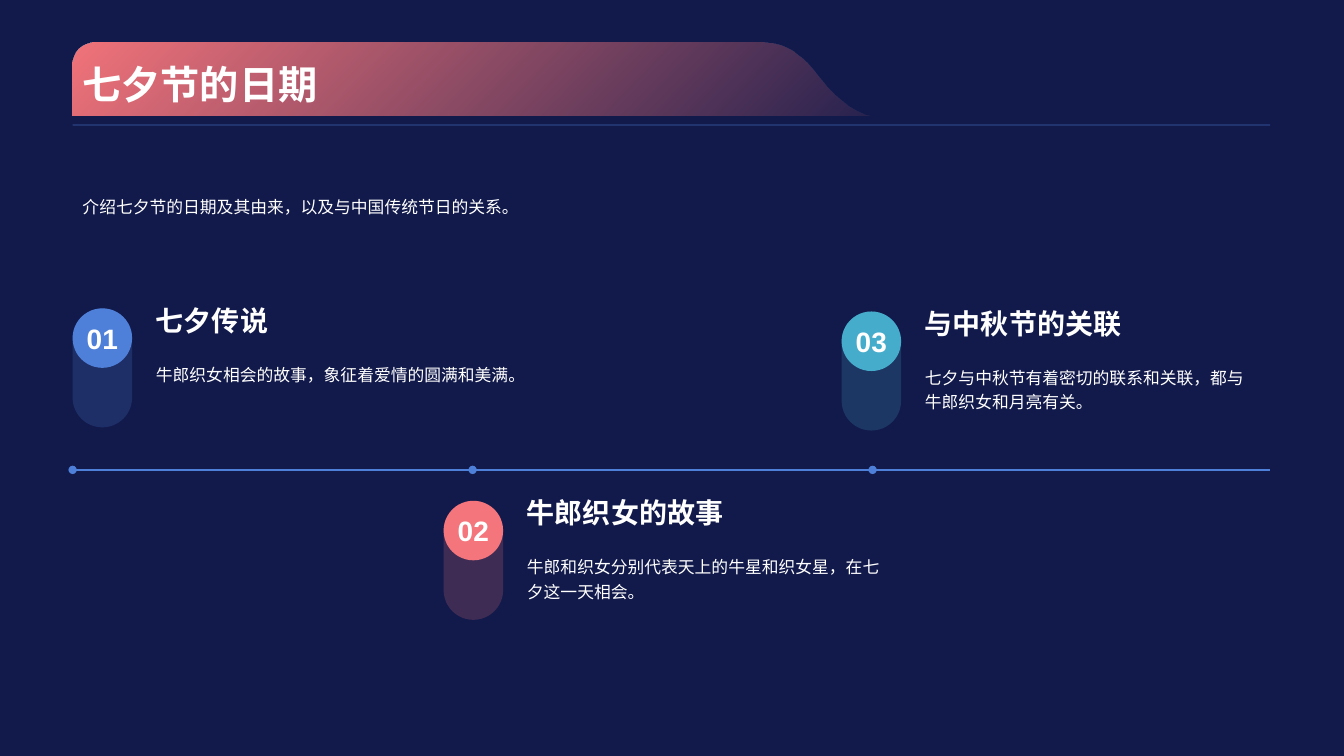
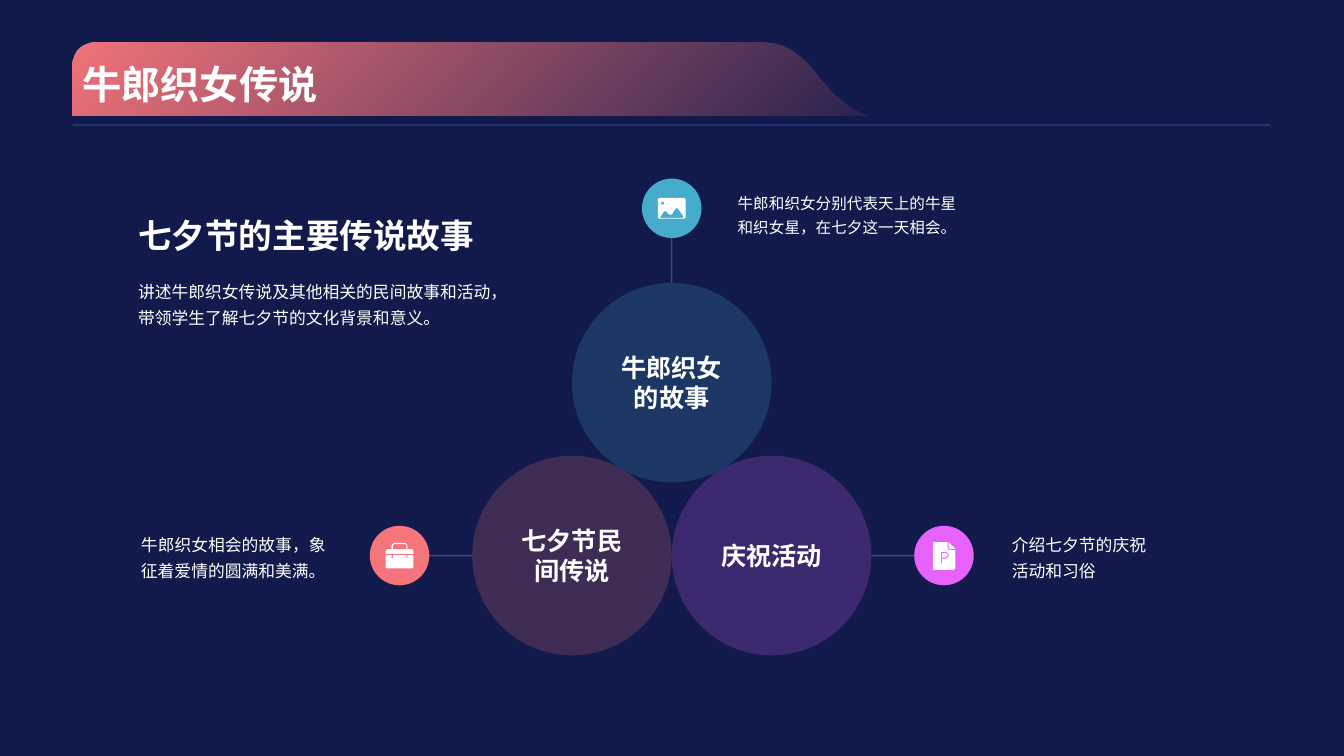
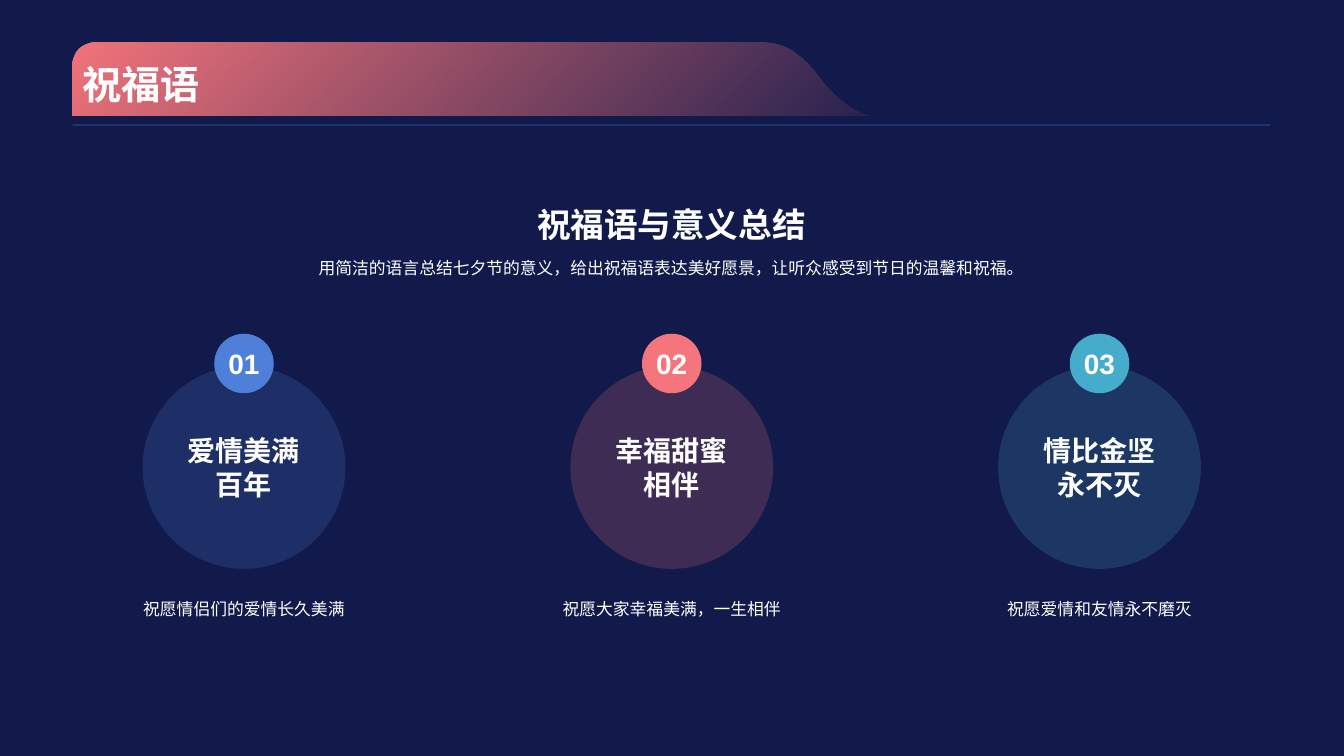
import math
from dataclasses import dataclass

from lxml import etree
from pptx import Presentation, util as u
from pptx.dml.color import RGBColor
from pptx.enum import lang, shapes, text
from pptx.oxml import ns

Point = tuple[float, float]
Contour = list[Point]
LEFT, CENTER, RIGHT = text.PP_ALIGN.LEFT, text.PP_ALIGN.CENTER, text.PP_ALIGN.RIGHT
TOP, MIDDLE, BOTTOM = text.MSO_ANCHOR.TOP, text.MSO_ANCHOR.MIDDLE, text.MSO_ANCHOR.BOTTOM
OVAL = shapes.MSO_SHAPE.OVAL
PILL = shapes.MSO_SHAPE.ROUNDED_RECTANGLE


@dataclass(frozen=True)
class Theme:
    font: str = "Arial"
    night: str = "121A4B"
    white: str = "FFFFFF"
    blue: str = "4E80D9"
    coral: str = "F4757B"
    teal: str = "45ACCC"
    violet: str = "E762FB"
    tint: int = 20
    title: float = 28
    headline: float = 24
    heading: float = 20
    hub: float = 18
    body: float = 12
    caption: float = 11.1


@dataclass(frozen=True)
class Box:
    """A rectangle in centimetres."""
    left: float
    top: float
    width: float
    height: float

    def lengths(self) -> list[u.Length]:
        return [u.Cm(v) for v in (self.left, self.top, self.width, self.height)]


@dataclass(frozen=True)
class Style:
    size: float
    bold: bool = False
    align: text.PP_ALIGN = LEFT
    anchor: text.MSO_ANCHOR = TOP
    spacing: float = 1.0
    inset: Point = (0.25, 0.13)
    wrap: bool = True


@dataclass(frozen=True)
class Milestone:
    number: str
    heading: str
    body: str
    color: str
    left: float
    top: float
    width: float


@dataclass(frozen=True)
class Hub:
    label: str
    color: str
    center: Point
    badge: Point
    icon: list[Contour]
    caption: str
    caption_box: Box
    caption_style: Style


@dataclass(frozen=True)
class Wish:
    number: str
    label: str
    body: str
    color: str


THEME = Theme()
SLIDE = Box(0, 0, 33.87, 19.05)
CENTER_X = 16.93
MARGIN, CONTENT = 1.83, 30.18
BADGE = 1.5
BODY = Style(THEME.body, spacing=1.2)
CENTERED_BODY = Style(THEME.body, align=CENTER, spacing=1.2)
NUMBER = Style(THEME.heading, True, CENTER, MIDDLE, wrap=False)

# Icon outlines in centimetres, measured from the middle of the badge.
PICTURE_ICON = [
    [(-0.35, -0.23), (-0.32, -0.26), (0.32, -0.26), (0.35, -0.23),
     (0.35, 0.23), (0.32, 0.26), (-0.32, 0.26), (-0.35, 0.23)],
    [(-0.3, 0.24), (-0.2, 0.08), (-0.14, 0.08), (-0.06, 0.16), (0, 0.16),
     (0.1, 0), (0.15, 0), (0.3, 0.21), (0.27, 0.24)],
    [(-0.23 + 0.04 * math.cos(k * math.pi / 4), -0.13 + 0.04 * math.sin(k * math.pi / 4))
     for k in range(8)],
]
CASE_ICON = [
    [(-0.35, -0.01), (-0.2, -0.01), (-0.2, 0.06), (-0.17, 0.06), (-0.17, -0.01),
     (0.17, -0.01), (0.17, 0.06), (0.2, 0.06), (0.2, -0.01), (0.35, -0.01),
     (0.35, 0.3), (0.32, 0.32), (-0.32, 0.32), (-0.35, 0.3)],
    [(-0.35, -0.04), (-0.35, -0.12), (-0.32, -0.16), (-0.2, -0.16), (-0.2, -0.26),
     (-0.15, -0.32), (0.15, -0.32), (0.2, -0.26), (0.2, -0.16), (0.32, -0.16),
     (0.35, -0.12), (0.35, -0.04)],
    [(-0.17, -0.16), (-0.17, -0.26), (-0.14, -0.29), (0.14, -0.29), (0.17, -0.26),
     (0.17, -0.16)],
]
FILE_ICON = [
    [(-0.25, -0.34), (0.09, -0.34), (0.09, -0.19), (0.13, -0.14), (0.29, -0.14),
     (0.29, 0.32), (0.25, 0.36), (-0.25, 0.36), (-0.28, 0.33), (-0.28, -0.31)],
    [(0.12, -0.33), (0.29, -0.17), (0.15, -0.17), (0.12, -0.2)],
    [(-0.08, -0.09), (0.06, -0.09), (0.12, -0.03), (0.12, 0.02), (0.06, 0.08),
     (-0.05, 0.08), (-0.05, 0.2), (-0.08, 0.2)],
    [(-0.05, -0.06), (0.05, -0.06), (0.09, -0.02), (0.09, 0.01), (0.05, 0.05),
     (-0.05, 0.05)],
]


def set_alpha(color_node, percent: int) -> None:
    etree.SubElement(color_node, ns.qn("a:alpha")).set("val", str(percent * 1000))


def write(frame, words: str, style: Style) -> None:
    frame.auto_size = text.MSO_AUTO_SIZE.NONE
    frame.word_wrap = style.wrap
    frame.vertical_anchor = style.anchor
    frame.margin_left = frame.margin_right = u.Cm(style.inset[0])
    frame.margin_top = frame.margin_bottom = u.Cm(style.inset[1])
    para = frame.paragraphs[0]
    para.alignment = style.align
    para.line_spacing = style.spacing
    span = para.add_run()
    span.text = words
    font = span.font
    font.name, font.size, font.bold = THEME.font, u.Pt(style.size), style.bold
    font.color.rgb = RGBColor.from_string(THEME.white)
    font.language_id = lang.MSO_LANGUAGE_ID.SIMPLIFIED_CHINESE


def add_text(page, box: Box, words: str, style: Style) -> None:
    write(page.shapes.add_textbox(*box.lengths()).text_frame, words, style)


def paint(shape, color: str, alpha: int = 100) -> None:
    """Fill a shape flatly, without outline or shadow."""
    shape.shadow.inherit = False
    shape.line.fill.background()
    shape.fill.solid()
    shape.fill.fore_color.rgb = RGBColor.from_string(color)
    if alpha < 100:
        set_alpha(shape.element.xpath("./p:spPr/a:solidFill/a:srgbClr")[0], alpha)


def add_shape(page, kind: shapes.MSO_SHAPE, box: Box, color: str, alpha: int = 100):
    shape = page.shapes.add_shape(kind, *box.lengths())
    if kind == PILL:
        shape.adjustments[0] = 0.5
    paint(shape, color, alpha)
    return shape


def add_circle(page, center: Point, size: float, color: str, alpha: int = 100):
    box = Box(center[0] - size / 2, center[1] - size / 2, size, size)
    return add_shape(page, OVAL, box, color, alpha)


def add_number(page, left: float, top: float, number: str, color: str) -> None:
    badge = add_shape(page, PILL, Box(left, top, BADGE, BADGE), color)
    write(badge.text_frame, number, NUMBER)


def add_line(page, start: Point, end: Point, color: str, alpha: int = 100,
             dotted_start: bool = False):
    """Draw a 1 pt line, with a round dot at its start if asked."""
    line = page.shapes.add_connector(
        shapes.MSO_CONNECTOR.STRAIGHT, *[u.Cm(v) for v in (*start, *end)])
    line.line.width = u.Pt(1)
    line.line.color.rgb = RGBColor.from_string(color)
    stroke = line.element.xpath("./p:spPr/a:ln")[0]
    if alpha < 100:
        set_alpha(stroke.xpath("./a:solidFill/a:srgbClr")[0], alpha)
    if dotted_start:
        etree.SubElement(stroke, ns.qn("a:headEnd")).set("type", "oval")
    etree.SubElement(line.element.spPr, ns.qn("a:effectLst"))
    return line


def add_outline(page, contours: list[Contour], origin: Point = (0, 0)):
    """Build one freeform; contours inside others become holes."""
    placed = [[(u.Cm(origin[0] + x), u.Cm(origin[1] + y)) for x, y in contour]
              for contour in contours]
    builder = page.shapes.build_freeform(*placed[0][0])
    for index, contour in enumerate(placed):
        if index:
            builder.move_to(*contour[0])
        builder.add_line_segments(contour[1:], close=True)
    return builder.convert_to_shape()


def curve(a: Point, b: Point, c: Point, d: Point, steps: int = 16) -> Contour:
    """Points along a cubic Bezier curve."""
    points = []
    for step in range(steps + 1):
        t = step / steps
        weights = ((1 - t) ** 3, 3 * t * (1 - t) ** 2, 3 * t * t * (1 - t), t ** 3)
        points.append(tuple(sum(w * p[axis] for w, p in zip(weights, (a, b, c, d)))
                            for axis in (0, 1)))
    return points


def dress_layout(layout, page) -> None:
    """Draw the title band and rule on a page, then move them to its layout."""
    top, bottom = 1.07, 2.9
    tail = (20.45, 1.7)
    contour = [
        *curve(tail, (19.96, 1.17), (19.58, top), (19.2, top)),
        *curve((2.39, top), (2.08, top), (MARGIN, 1.32), (MARGIN, 1.65)),
        (MARGIN, bottom),
        *curve((21.92, bottom), (21.29, 2.72), (20.9, 2.26), tail),
    ]
    band = add_outline(page, [contour])
    paint(band, THEME.coral)
    band.fill.gradient()
    band.fill.gradient_angle = 315
    for stop, position in zip(band.fill.gradient_stops, (0, 1)):
        stop.position = position
        stop.color.rgb = RGBColor.from_string(THEME.coral)
    set_alpha(band.element.xpath(".//a:gs/a:srgbClr")[-1], 10)
    rule = add_line(page, (MARGIN, 3.15), (MARGIN + CONTENT, 3.15), THEME.blue, 40)
    for shape in (band, rule):
        layout.shapes.element.append(shape.element)


def add_page(deck, layout, title: str):
    page = deck.slides.add_slide(layout)
    holder = page.shapes.title
    box = Box(MARGIN, 0, CONTENT, 2.84)
    holder.left, holder.top, holder.width, holder.height = box.lengths()
    write(holder.text_frame, title, Style(THEME.title, True, anchor=BOTTOM))
    return page


def draw_dates(page) -> None:
    add_text(page, Box(MARGIN, 4.72, CONTENT, 0.81),
             "介绍七夕节的日期及其由来，以及与中国传统节日的关系。", BODY)
    step, length, axis = 10.08, 10.01, 11.84
    for index in range(3):
        left = MARGIN + index * step
        add_line(page, (left, axis), (left + length, axis), THEME.blue, dotted_start=True)
    inset = (0.3, 0.3)
    heading = Style(THEME.heading, True, anchor=BOTTOM, inset=inset)
    body = Style(THEME.body, spacing=1.2, inset=inset)
    milestones = [
        Milestone("01", "七夕传说", "牛郎织女相会的故事，象征着爱情的圆满和美满。",
                  THEME.blue, MARGIN, 7.77, 10.92),
        Milestone("02", "牛郎织女的故事", "牛郎和织女分别代表天上的牛星和织女星，在七夕这一天相会。",
                  THEME.coral, 11.18, 12.62, 9.65),
        Milestone("03", "与中秋节的关联", "七夕与中秋节有着密切的联系和关联，都与牛郎织女和月亮有关。",
                  THEME.teal, 21.21, 7.85, 8.97),
    ]
    for item in milestones:
        add_shape(page, PILL, Box(item.left, item.top, BADGE, 2 * BADGE),
                  item.color, THEME.tint)
        add_number(page, item.left, item.top, item.number, item.color)
        left = item.left + 1.8
        add_text(page, Box(left, item.top - 0.28, item.width, 1.3), item.heading, heading)
        add_text(page, Box(left, item.top + 1.02, item.width, 1.78), item.body, body)


def draw_legends(page) -> None:
    left, width = 3.23, 9.7
    add_text(page, Box(left, 4.9, width, 1.65), "七夕节的主要传说故事",
             Style(THEME.headline, True, anchor=BOTTOM))
    add_text(page, Box(left, 6.81, width, 1.52),
             "讲述牛郎织女传说及其他相关的民间故事和活动，带领学生了解七夕节的文化背景和意义。",
             Style(THEME.body, spacing=1.3))
    size, row, reach = 5.03, 14, 6.86
    radius = size / 2
    hubs = [
        Hub("牛郎织女的故事", THEME.teal, (CENTER_X, row - radius * math.sqrt(3)),
            (CENTER_X, 5.25), PICTURE_ICON,
            "牛郎和织女分别代表天上的牛星和织女星，在七夕这一天相会。",
            Box(18.34, 4.39, 6.22, 1.7), Style(THEME.caption, anchor=BOTTOM, spacing=1.3)),
        Hub("庆祝活动", THEME.violet, (CENTER_X + radius, row),
            (CENTER_X + reach, row), FILE_ICON, "介绍七夕节的庆祝活动和习俗",
            Box(25.25, 13.26, 4.29, 1.52), Style(THEME.body, anchor=BOTTOM, spacing=1.3)),
        Hub("七夕节民间传说", THEME.coral, (CENTER_X - radius, row),
            (CENTER_X - reach, row), CASE_ICON, "牛郎织女相会的故事，象征着爱情的圆满和美满。",
            Box(left, 13.26, 5.23, 1.52),
            Style(THEME.body, align=RIGHT, anchor=BOTTOM, spacing=1.3)),
    ]
    label = Style(THEME.hub, True, CENTER, MIDDLE)
    for hub in hubs:
        circle = add_circle(page, hub.center, size, hub.color, THEME.tint)
        write(circle.text_frame, hub.label, label)
        (x, y), (badge_x, badge_y) = hub.center, hub.badge
        share = radius / math.dist(hub.center, hub.badge)
        edge = (x + (badge_x - x) * share, y + (badge_y - y) * share)
        add_line(page, hub.badge, edge, THEME.white, THEME.tint)
        add_circle(page, hub.badge, BADGE, hub.color)
        paint(add_outline(page, hub.icon, hub.badge), THEME.white)
        add_text(page, hub.caption_box, hub.caption, hub.caption_style)


def draw_wishes(page) -> None:
    headline = Style(THEME.headline, True, CENTER, MIDDLE)
    add_text(page, Box(MARGIN, 4.7, CONTENT, 1.9), "祝福语与意义总结", headline)
    add_text(page, Box(MARGIN, 6.27, CONTENT, 0.81),
             "用简洁的语言总结七夕节的意义，给出祝福语表达美好愿景，让听众感受到节日的温馨和祝福。",
             CENTERED_BODY)
    wishes = [
        Wish("01", "爱情美满百年", "祝愿情侣们的爱情长久美满", THEME.blue),
        Wish("02", "幸福甜蜜相伴", "祝愿大家幸福美满，一生相伴", THEME.coral),
        Wish("03", "情比金坚永不灭", "祝愿爱情和友情永不磨灭", THEME.teal),
    ]
    step, width = 10.78, 6.99
    label = Style(THEME.heading, True, CENTER, MIDDLE)
    for index, wish in enumerate(wishes):
        x = CENTER_X + (index - 1) * step
        circle = add_circle(page, (x, 11.78), 5.11, wish.color, THEME.tint)
        write(circle.text_frame, wish.label, label)
        add_text(page, Box(x - width / 2, 14.86, width, 0.81), wish.body, CENTERED_BODY)
        add_number(page, x - BADGE / 2, 8.41, wish.number, wish.color)


def main() -> None:
    deck = Presentation()
    deck.slide_width, deck.slide_height = u.Cm(SLIDE.width), u.Cm(SLIDE.height)
    backdrop = deck.slide_master.background.fill
    backdrop.solid()
    backdrop.fore_color.rgb = RGBColor.from_string(THEME.night)
    layout = deck.slide_layouts.get_by_name("Title Only")
    contents = [("七夕节的日期", draw_dates), ("牛郎织女传说", draw_legends), ("祝福语", draw_wishes)]
    for index, (title, draw) in enumerate(contents):
        page = add_page(deck, layout, title)
        if index == 0:
            dress_layout(layout, page)
        draw(page)
    deck.save("out.pptx")


if __name__ == "__main__":
    main()
